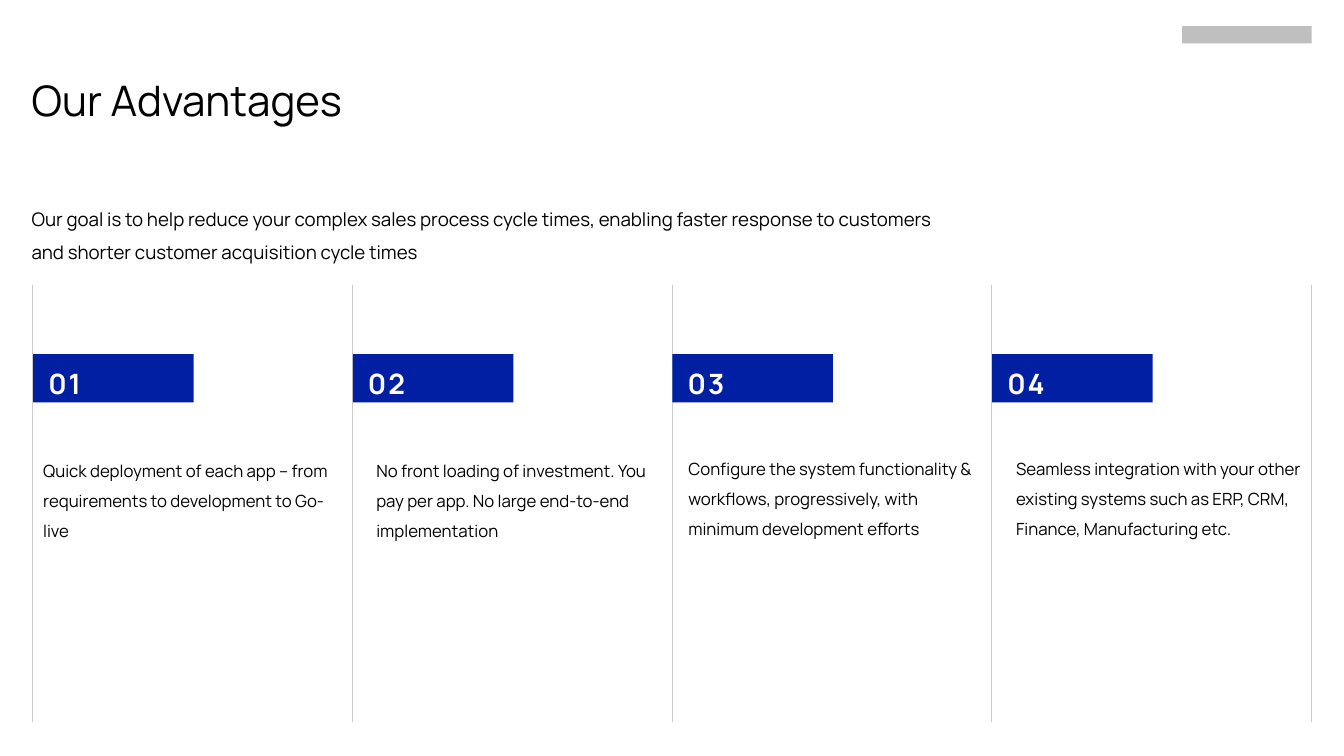
from pptx import Presentation
from pptx.dml.color import RGBColor
from pptx.enum.shapes import MSO_CONNECTOR, MSO_SHAPE
from pptx.enum.text import MSO_ANCHOR, MSO_AUTO_SIZE, PP_ALIGN
from pptx.oxml.ns import qn
from pptx.util import Pt
from lxml import etree

COLORS = {"blue": "001FA3", "rule": "CCCCCC", "logo": "BFBFBF",
          "text": "000000", "white": "FFFFFF"}
FONT = "Manrope"

# Column grid
LEFT, PITCH = 35, 342.5
RULE_TOP, RULE_BOTTOM = 305, 774

# Number, description, and left and top of the description
COLUMNS = [
    ("01", "Quick deployment of each app – from requirements to development to Go-live", 46.2, 482.4),
    ("02", "No front loading of investment. You pay per app. No large end-to-end implementation", 403.2, 482.4),
    ("03", "Configure the system functionality & workflows, progressively, with minimum development efforts", 737.5, 480.2),
    ("04", "Seamless integration with your other existing systems such as ERP, CRM, Finance, Manufacturing etc.", 1088.6, 480.2),
]


def write(sp, text, size, color="text", spacing=1.0, bold=False, left=0, top=0):
    tf = sp.text_frame
    frame = {"word_wrap": True, "auto_size": MSO_AUTO_SIZE.NONE,
             "vertical_anchor": MSO_ANCHOR.TOP, "margin_left": Pt(left),
             "margin_top": Pt(top), "margin_right": 0, "margin_bottom": 0}
    for name, value in frame.items():
        setattr(tf, name, value)
    p = tf.paragraphs[0]
    p.alignment = PP_ALIGN.LEFT
    p.line_spacing = spacing
    r = p.add_run()
    r.text = text
    for name, value in {"name": FONT, "size": Pt(size), "bold": bold}.items():
        setattr(r.font, name, value)
    r.font.color.rgb = RGBColor.from_string(COLORS[color])
    return r


def add_block(s, x, y, width, height, color):
    sp = s.shapes.add_shape(MSO_SHAPE.RECTANGLE, Pt(x), Pt(y), Pt(width), Pt(height))
    sp.shadow.inherit = False
    sp.fill.solid()
    sp.fill.fore_color.rgb = RGBColor.from_string(COLORS[color])
    sp.line.fill.background()
    return sp


prs = Presentation()
prs.slide_width, prs.slide_height = Pt(1440), Pt(810)
s = prs.slides.add_slide(prs.slide_layouts[5])

# Title
title = s.shapes.title
box = {"left": 34, "top": 80, "width": 738, "height": 54.7}
for name, value in box.items():
    setattr(title, name, Pt(value))
write(title, "Our Advantages", 45)

# Logo place
add_block(s, 1266.5, 28, 139, 18.5, "logo")

# Introduction
sp = s.shapes.add_textbox(Pt(33.8), Pt(210.2), Pt(970), Pt(69))
write(sp, "Our goal is to help reduce your complex sales process cycle times, "
          "enabling faster response to customers and shorter customer acquisition "
          "cycle times", 20, spacing=1.5)

# Vertical rules around the columns
for i in range(len(COLUMNS) + 1):
    x = Pt(LEFT + i * PITCH)
    rule = s.shapes.add_connector(MSO_CONNECTOR.STRAIGHT, x, Pt(RULE_TOP), x, Pt(RULE_BOTTOM))
    rule.line.width = Pt(1)
    rule.line.color.rgb = RGBColor.from_string(COLORS["rule"])
    etree.SubElement(rule._element.spPr, qn("a:effectLst"))

# Numbered tags and descriptions
for i, (number, description, x, y) in enumerate(COLUMNS):
    tag = add_block(s, LEFT + 0.5 + i * PITCH, 379.4, 172, 51.7, "blue")
    r = write(tag, number, 30, "white", Pt(42), bold=True, left=16.3, top=7.2)
    r.font._element.set("spc", "210")

    sp = s.shapes.add_textbox(Pt(x), Pt(y), Pt(317), Pt(95))
    write(sp, description, 18, spacing=1.5)

prs.save("out.pptx")
